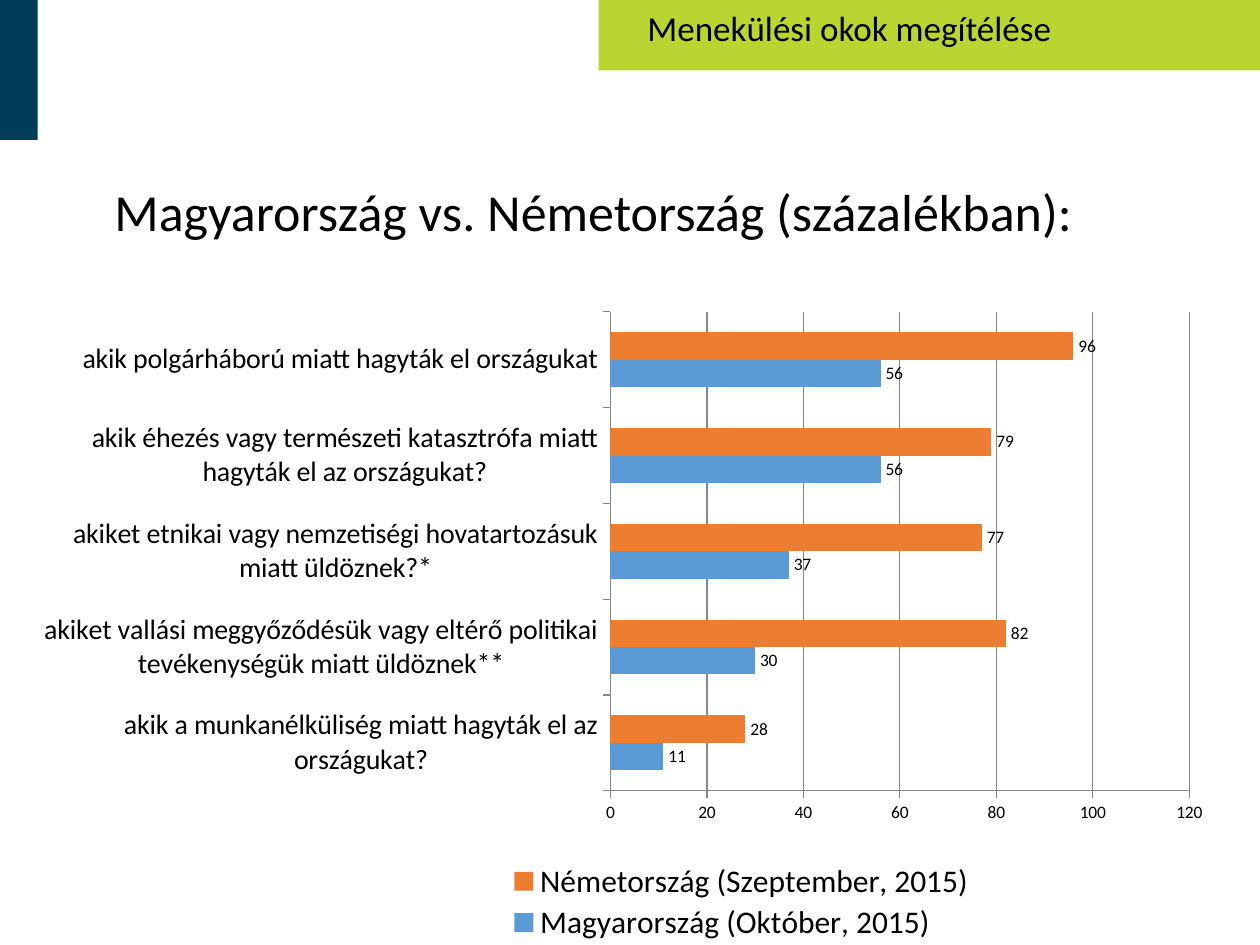
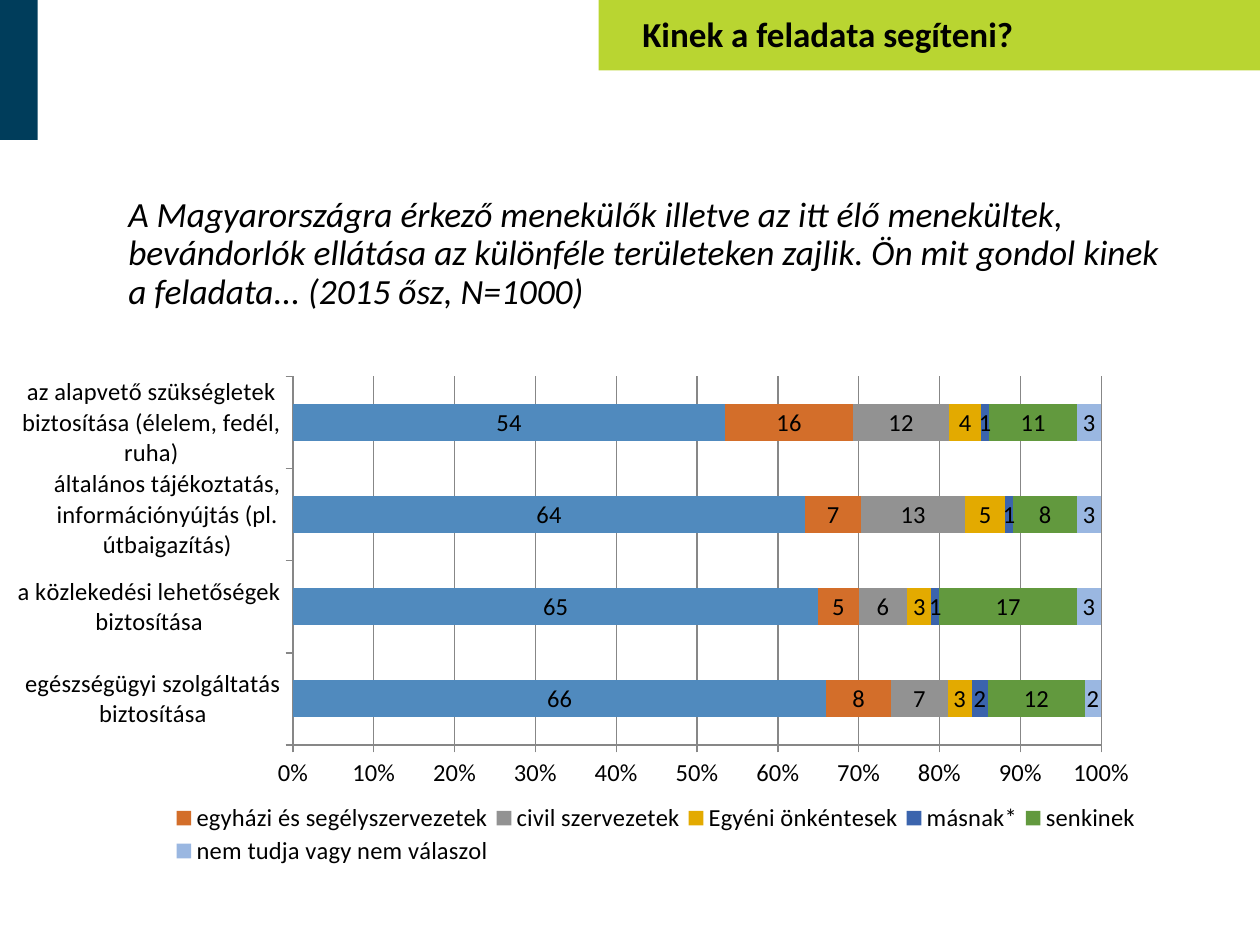
import pptx
import pptx.chart.data
import pptx.dml.color
import pptx.enum.chart
import pptx.enum.shapes
import pptx.enum.text
import pptx.oxml
import pptx.oxml.ns
import pptx.util

Inches = pptx.util.Inches
Pt = pptx.util.Pt
ChartType = pptx.enum.chart.XL_CHART_TYPE
LabelPosition = pptx.enum.chart.XL_LABEL_POSITION

FONT = "Calibri"
BLACK = "000000"
GRID = "878787"
BANDS = [(4.75, 0, 5.25, 0.56, "B9D531"), (0, 0, 0.3, 1.11, "003D5B")]

SLIDES = [
    {
        "header": ("Menekülési okok megítélése", (5.04, 0, 4.39, 0.44), False),
        "title": ("Magyarország vs. Németország (százalékban):",
                  (0.81, 1.16, 8.47, 1.09), 29.7, False),
        "chart": {
            "type": ChartType.BAR_CLUSTERED,
            "box": (0.35, 2.25, 9.37, 5.25),
            "plot": (0.479, 0.043, 0.491, 0.724),
            "legend": (0.385, 0.87, 0.41, 0.13),
            "sizes": {"chart": 10, "category": 16, "legend": 18},
            "axis": (120, 20, "0"),
            "overlap": 0,
            "labels": LabelPosition.OUTSIDE_END,
            "unlisted": [],
            "categories": [
                "akik a munkanélküliség miatt hagyták el az országukat?",
                "akiket vallási meggyőződésük vagy eltérő politikai tevékenységük miatt üldöznek**",
                "akiket etnikai vagy nemzetiségi hovatartozásuk miatt üldöznek?*",
                "akik éhezés vagy természeti katasztrófa miatt hagyták el az országukat?",
                "akik polgárháború miatt hagyták el országukat",
            ],
            "series": [
                ("Magyarország (Október, 2015)", (11, 30, 37, 56, 56), "5B9BD5"),
                ("Németország (Szeptember, 2015)", (28, 82, 77, 79, 96), "ED7D31"),
            ],
        },
    },
    {
        "header": ("Kinek a feladata segíteni?", (5, 0.05, 5, 0.44), True),
        "title": ("A Magyarországra érkező menekülők illetve az itt élő menekültek, "
                  "bevándorlók ellátása az különféle területeken zajlik. Ön mit gondol "
                  "kinek a feladata... (2015 ősz, N=1000)",
                  (0.92, 1.39, 8.56, 1.26), 20.2, True),
        "chart": {
            "type": ChartType.BAR_STACKED_100,
            "box": (0.14, 2.8, 9.12, 4.18),
            "plot": (0.239, 0.045, 0.704, 0.7),
            "legend": (0.13, 0.85, 0.85, 0.13),
            "sizes": {"chart": 14, "category": 14, "legend": 14},
            "axis": (1, 0.1, "0%"),
            "overlap": 100,
            "labels": LabelPosition.CENTER,
            "unlisted": [6],
            "categories": [
                "egészségügyi szolgáltatás biztosítása",
                "a közlekedési lehetőségek biztosítása",
                "általános tájékoztatás, információnyújtás (pl. útbaigazítás)",
                "az alapvető szükségletek biztosítása (élelem, fedél, ruha)",
            ],
            "series": [
                ("Állam vagy önkormányzat", (66, 65, 64, 54), "508ABE"),
                ("egyházi és segélyszervezetek", (8, 5, 7, 16), "D36E2A"),
                ("civil szervezetek", (7, 6, 13, 12), "929292"),
                ("Egyéni önkéntesek", (3, 3, 5, 4), "E3AA00"),
                ("másnak*", (2, 1, 1, 1), "3B64AD"),
                ("senkinek", (12, 17, 8, 11), "62993E"),
                ("nem tudja vagy nem válaszol", (2, 3, 3, 3), "9AB7E1"),
            ],
        },
    },
]


def rgb(value):
    return pptx.dml.color.RGBColor.from_string(value)


def inches(box):
    return [Inches(v) for v in box]


def style_font(font, size, bold=False, italic=False):
    font.name = FONT
    font.size = Pt(size)
    font.bold = bold
    font.italic = italic
    font.color.rgb = rgb(BLACK)


def add_bands(s):
    for *box, color in BANDS:
        sp = s.shapes.add_shape(pptx.enum.shapes.MSO_SHAPE.RECTANGLE, *inches(box))
        sp.shadow.inherit = False
        sp.fill.solid()
        sp.fill.fore_color.rgb = rgb(color)
        sp.line.fill.background()


def add_text(s, text, box, size, bold=False, italic=False):
    tf = s.shapes.add_textbox(*inches(box)).text_frame
    tf.word_wrap = True
    tf.text = text
    p = tf.paragraphs[0]
    style_font(p.runs[0].font, size, bold, italic)
    return tf


def add_title(s, text, box, size, italic):
    tf = add_text(s, text, box, size, italic=italic)
    tf.vertical_anchor = pptx.enum.text.MSO_ANCHOR.MIDDLE
    tf.paragraphs[0].line_spacing = 0.9


def chart_xml(tag, content):
    return pptx.oxml.parse_xml(
        f'<c:{tag} {pptx.oxml.ns.nsdecls("c")}>{content}</c:{tag}>')


def place(parent, index, box, inner=False):
    for old in parent.findall(pptx.oxml.ns.qn("c:layout")):
        parent.remove(old)
    target = '<c:layoutTarget val="inner"/>' if inner else ""
    modes = "".join(f'<c:{k}Mode val="edge"/>' for k in "xy")
    values = "".join(f'<c:{k} val="{v}"/>' for k, v in zip("xywh", box))
    layout = f"<c:manualLayout>{target}{modes}{values}</c:manualLayout>"
    parent.insert(index, chart_xml("layout", layout))


def style_axes(chart, maximum, step, number_format):
    axis = chart.value_axis
    axis.minimum_scale, axis.maximum_scale, axis.major_unit = 0, maximum, step
    axis.tick_labels.number_format = number_format
    axis.tick_labels.number_format_is_linked = False
    axis.has_major_gridlines = True
    lines = [axis.major_gridlines.format.line]
    for a in (axis, chart.category_axis):
        a.major_tick_mark = pptx.enum.chart.XL_TICK_MARK.OUTSIDE
        lines.append(a.format.line)
    for line in lines:
        line.color.rgb = rgb(GRID)
        line.width = Pt(0.75)


def add_legend(chart, box, size, unlisted):
    chart.has_legend = True
    legend = chart.legend
    legend.position = pptx.enum.chart.XL_LEGEND_POSITION.RIGHT
    legend.include_in_layout = False
    style_font(legend.font, size)
    element = chart.element.find(".//" + pptx.oxml.ns.qn("c:legend"))
    place(element, 1, box)
    for i in unlisted:
        element.insert(1, chart_xml(
            "legendEntry", f'<c:idx val="{i}"/><c:delete val="1"/>'))


def add_bar_chart(s, c):
    data = pptx.chart.data.CategoryChartData(number_format="0")
    data.categories = c["categories"]
    for name, values, _ in c["series"]:
        data.add_series(name, values)
    chart = s.shapes.add_chart(c["type"], *inches(c["box"]), data).chart
    chart.has_title = False
    sizes = c["sizes"]
    style_font(chart.font, sizes["chart"])
    style_axes(chart, *c["axis"])
    style_font(chart.category_axis.tick_labels.font, sizes["category"])
    plot = chart.plots[0]
    plot.vary_by_categories = False
    plot.gap_width = 150
    plot.overlap = c["overlap"]
    for series, (_, _, color) in zip(plot.series, c["series"]):
        series.format.fill.solid()
        series.format.fill.fore_color.rgb = rgb(color)
        labels = series.data_labels
        labels.show_value = True
        labels.number_format = "0"
        labels.number_format_is_linked = False
        labels.position = c["labels"]
        style_font(labels.font, sizes["chart"])
    add_legend(chart, c["legend"], sizes["legend"], c["unlisted"])
    plot_area = chart.element.find(".//" + pptx.oxml.ns.qn("c:plotArea"))
    place(plot_area, 0, c["plot"], inner=True)


def main():
    prs = pptx.Presentation()
    prs.slide_width, prs.slide_height = Inches(10), Inches(7.5)
    for content in SLIDES:
        s = prs.slides.add_slide(prs.slide_layouts[6])
        add_bands(s)
        add_title(s, *content["title"])
        add_bar_chart(s, content["chart"])
        text, box, bold = content["header"]
        add_text(s, text, box, 20, bold)
    prs.save("out.pptx")


if __name__ == "__main__":
    main()
